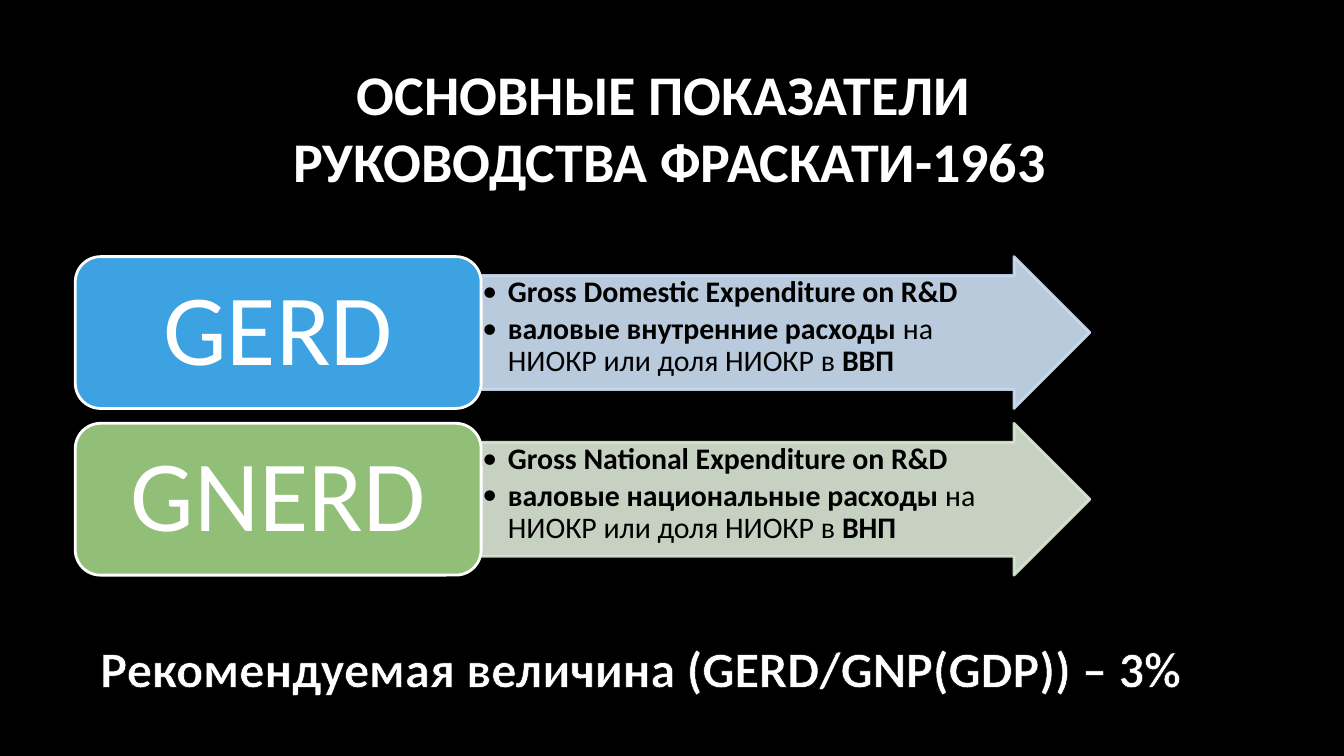
from lxml import etree
from pptx import Presentation
from pptx.dml.color import RGBColor
from pptx.enum.shapes import MSO_SHAPE
from pptx.enum.text import MSO_ANCHOR, MSO_AUTO_SIZE, PP_ALIGN
from pptx.oxml.ns import qn
from pptx.util import Inches, Pt

ARROW, CARD = MSO_SHAPE.RIGHT_ARROW, MSO_SHAPE.ROUNDED_RECTANGLE
TOP, MIDDLE = MSO_ANCHOR.TOP, MSO_ANCHOR.MIDDLE
CENTER, LEFT = PP_ALIGN.CENTER, PP_ALIGN.LEFT
NO_FIT, GROW = MSO_AUTO_SIZE.NONE, MSO_AUTO_SIZE.SHAPE_TO_FIT_TEXT

FONT = "Calibri"
WHITE, BLACK = "FFFFFF", "000000"
SLIDE_W = 10
SLIDE_H = SLIDE_W * 9 / 16
ROW_LEFT, ROW_TOP, ROW_W, ROW_H, ROW_PITCH = 0.56, 1.91, 7.55, 1.13, 1.24
CARD_SHARE = 0.4

# Acronym, card colour, arrow colour, points as (text, bold) runs
INDICATORS = [
    ("GERD", "3CA2E2", "CEE0F4", [
        [("Gross Domestic Expenditure on R&D", True)],
        [("валовые внутренние расходы", True),
         (" на НИОКР или доля НИОКР в ", False), ("ВВП", True)]]),
    ("GNERD", "91BF77", "DCE8D6", [
        [("Gross National Expenditure on R&D", True)],
        [("валовые национальные расходы", True),
         (" на НИОКР или доля НИОКР в ", False), ("ВНП", True)]]),
]


def rgb(value):
    return RGBColor.from_string(value)


def style_font(font, size, color, bold=False):
    font.name, font.size, font.bold = FONT, Pt(size), bold
    font.color.rgb = rgb(color)


def set_frame(frame, insets, anchor):
    frame.word_wrap = True
    frame.vertical_anchor = anchor
    (frame.margin_left, frame.margin_top,
     frame.margin_right, frame.margin_bottom) = map(Inches, insets)


def add_block(slide, preset, box, fill, line, opacity=100):
    block = slide.shapes.add_shape(preset, *map(Inches, box))
    block.shadow.inherit = False
    block.fill.solid()
    block.fill.fore_color.rgb = rgb(fill)
    block.line.color.rgb = rgb(line)
    block.line.width = Pt(1.5)
    if opacity < 100:
        for color in block.element.spPr.iter(qn("a:srgbClr")):
            etree.SubElement(color, qn("a:alpha"), val=str(opacity * 1000))
    return block


def add_bullet(paragraph):
    properties = paragraph._p.get_or_add_pPr()
    properties.set("marL", str(Inches(0.19)))
    properties.set("indent", str(-Inches(0.19)))
    etree.SubElement(properties, qn("a:buFont"), typeface=FONT)
    etree.SubElement(properties, qn("a:buChar"), char="•")


def add_title(slide, box):
    title = slide.shapes.title
    title.left, title.top, title.width, title.height = map(Inches, box)
    frame = title.text_frame
    frame.text = "ОСНОВНЫЕ ПОКАЗАТЕЛИ \vРУКОВОДСТВА ФРАСКАТИ-1963"
    frame.auto_size = NO_FIT
    frame.vertical_anchor = MIDDLE
    frame.paragraphs[0].alignment = CENTER
    for run in frame.paragraphs[0].runs:
        style_font(run.font, 30, WHITE, True)


def add_indicator(slide, box, acronym, card_color, arrow_color, points):
    left, top, width, height = box
    card_w = width * CARD_SHARE

    # Arrow with the explanation
    arrow = add_block(slide, ARROW, (left + card_w, top, width - card_w, height),
                      arrow_color, arrow_color, opacity=90)
    arrow.adjustments[0], arrow.adjustments[1] = 0.75, 0.5
    frame = arrow.text_frame
    set_frame(frame, (0.01, 0.01, height / 5, 0.01), TOP)
    for index, point in enumerate(points):
        paragraph = frame.add_paragraph() if index else frame.paragraphs[0]
        add_bullet(paragraph)
        style_font(paragraph.font, 16, BLACK)
        paragraph.level = 1
        paragraph.alignment = LEFT
        paragraph.line_spacing = 0.9
        paragraph.space_after = Pt(2.4)
        for text, bold in point:
            run = paragraph.add_run()
            run.text = text
            style_font(run.font, 16, BLACK, bold)

    # Card with the acronym
    card = add_block(slide, CARD, (left, top, card_w, height), card_color, WHITE)
    set_frame(card.text_frame, (0.23, 0.11, 0.23, 0.11), MIDDLE)
    card.text_frame.text = acronym
    name = card.text_frame.paragraphs[0]
    name.alignment = CENTER
    name.line_spacing = 0.9
    style_font(name.runs[0].font, 54, WHITE)


def add_recommendation(slide, box):
    recommendation = slide.shapes.add_textbox(*map(Inches, box))
    frame = recommendation.text_frame
    set_frame(frame, (0.07, 0.04, 0.07, 0.04), TOP)
    frame.auto_size = GROW
    frame.text = "Рекомендуемая величина (GERD/GNP(GDP)) – 3% "
    frame.paragraphs[0].alignment = CENTER
    run = frame.paragraphs[0].runs[0]
    style_font(run.font, 27, WHITE, True)

    # Black outline around the letters
    outline = etree.Element(qn("a:ln"), w=str(Pt(1.06)))
    fill = etree.SubElement(outline, qn("a:solidFill"))
    etree.SubElement(fill, qn("a:srgbClr"), val=BLACK)
    run._r.get_or_add_rPr().insert(0, outline)


def main():
    deck = Presentation()
    deck.slide_width, deck.slide_height = Inches(SLIDE_W), Inches(SLIDE_H)
    slide = deck.slides.add_slide(deck.slide_layouts.get_by_name("Title Only"))
    slide.background.fill.solid()
    slide.background.fill.fore_color.rgb = rgb(BLACK)

    add_title(slide, (-0.42, 0.35, 10.81, 1.19))
    for row, indicator in enumerate(INDICATORS):
        box = (ROW_LEFT, ROW_TOP + row * ROW_PITCH, ROW_W, ROW_H)
        add_indicator(slide, box, *indicator)
    add_recommendation(slide, (0.32, 4.7, 8.98, 0.53))
    deck.save("out.pptx")


if __name__ == "__main__":
    main()
